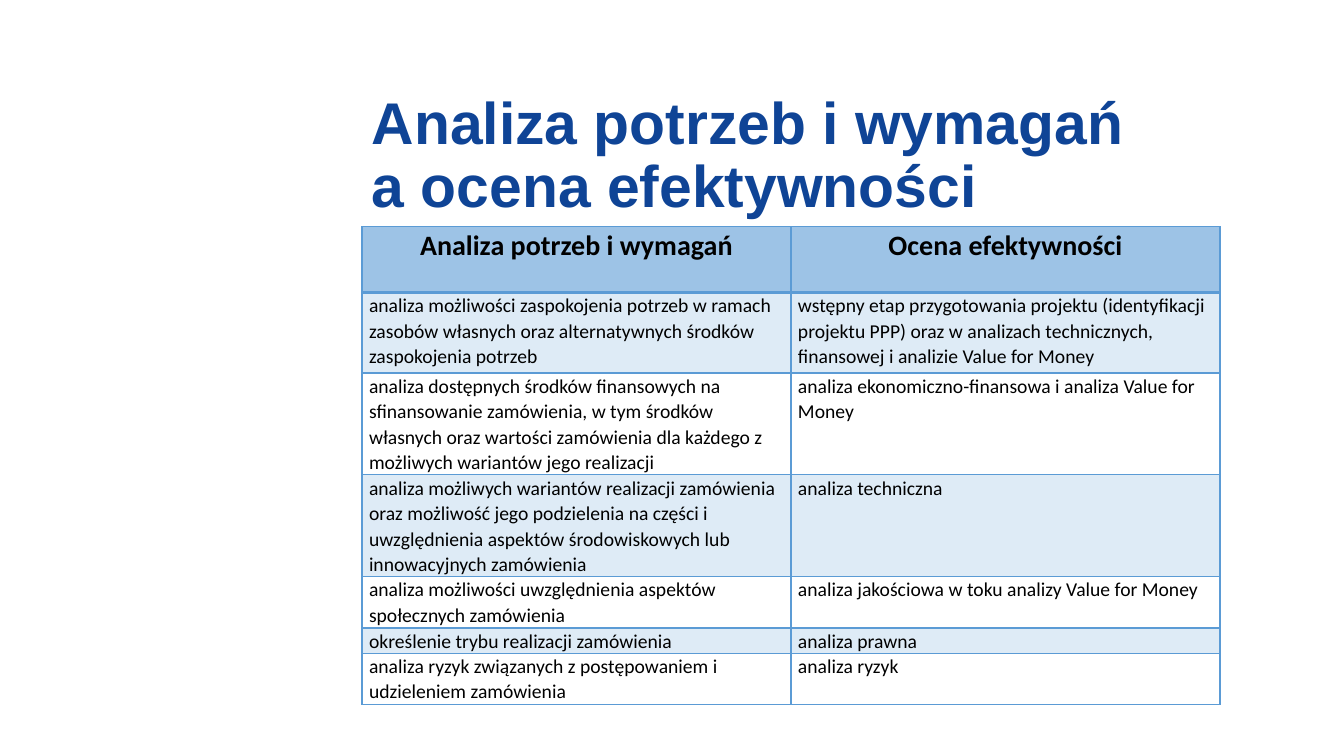
"""Build the slide comparing needs analysis with effectiveness assessment."""
from dataclasses import dataclass

from lxml.etree import SubElement
from pptx import Presentation
from pptx.dml.color import RGBColor
from pptx.enum.text import MSO_ANCHOR, PP_ALIGN
from pptx.oxml.ns import qn
from pptx.util import Inches, Pt


@dataclass(frozen=True)
class Theme:
    title_color: str = "0F4496"
    text_color: str = "000000"
    header_fill: str = "9DC3E6"
    accent: str = "5B9BD5"
    band_alpha: int = 20
    title_font: str = "Arial"
    table_font: str = "Calibri"
    title_size: int = 42
    header_size: int = 20
    body_size: int = 14


THEME = Theme()
TITLE_LINES = ["Analiza potrzeb i wymagań", "a ocena efektywności"]
HEADERS = ("Analiza potrzeb i wymagań", "Ocena efektywności")
COMPARISON = [
    ("analiza możliwości zaspokojenia potrzeb w ramach zasobów własnych oraz "
     "alternatywnych środków zaspokojenia potrzeb",
     "wstępny etap przygotowania projektu (identyfikacji projektu PPP) oraz "
     "w analizach technicznych, finansowej i analizie Value for Money"),
    ("analiza dostępnych środków finansowych na sfinansowanie zamówienia, "
     "w tym środków własnych oraz wartości zamówienia dla każdego "
     "z możliwych wariantów jego realizacji",
     "analiza ekonomiczno-finansowa i analiza Value for Money"),
    ("analiza możliwych wariantów realizacji zamówienia oraz możliwość jego "
     "podzielenia na części i uwzględnienia aspektów środowiskowych "
     "lub innowacyjnych zamówienia",
     "analiza techniczna"),
    ("analiza możliwości uwzględnienia aspektów społecznych zamówienia",
     "analiza jakościowa w toku analizy Value for Money"),
    ("określenie trybu realizacji zamówienia", "analiza prawna"),
    ("analiza ryzyk związanych z postępowaniem i udzieleniem zamówienia",
     "analiza ryzyk"),
]
ROW_HEIGHTS = [0.65, 0.8, 1.01, 1.01, 0.51, 0.25, 0.51]


def write_text(frame, lines, *, font, size, color, bold=False,
               align=PP_ALIGN.LEFT, spacing=1.0, after=0):
    """Write lines, split by line breaks, as one formatted paragraph."""
    frame.word_wrap = True
    paragraph = frame.paragraphs[0]
    paragraph.alignment = align
    paragraph.line_spacing = spacing
    paragraph.space_after = Pt(after)
    for index, line in enumerate(lines):
        if index:
            paragraph.add_line_break()
        run = paragraph.add_run()
        run.text = line
        run.font.name = font
        run.font.size = Pt(size)
        run.font.bold = bold
        run.font.color.rgb = RGBColor.from_string(color)


def add_title(slide):
    """Add the two-line title, centred vertically in its box."""
    box = slide.shapes.add_textbox(
        Inches(3.59), Inches(1.26), Inches(8.91), Inches(0.59))
    box.text_frame.vertical_anchor = MSO_ANCHOR.MIDDLE
    write_text(box.text_frame, TITLE_LINES, font=THEME.title_font,
               size=THEME.title_size, color=THEME.title_color, bold=True,
               spacing=0.9)


def set_borders(cell, **widths):
    """Draw the cell's borders, 1 pt wide unless a side is given a width."""
    properties = cell._tc.get_or_add_tcPr()
    for index, side in enumerate(("left", "right", "top", "bottom")):
        line = properties.makeelement(
            qn(f"a:ln{side[0].upper()}"), {"w": str(Pt(widths.get(side, 1)))})
        properties.insert(index, line)
        fill = SubElement(line, qn("a:solidFill"))
        SubElement(fill, qn("a:srgbClr"), val=THEME.accent)


def fill_cell(cell, row):
    """Fill the header, tint odd rows and leave even rows clear."""
    if row and row % 2 == 0:
        cell.fill.background()
        return
    cell.fill.solid()
    color = THEME.accent if row else THEME.header_fill
    cell.fill.fore_color.rgb = RGBColor.from_string(color)
    if row:
        color_element = cell._tc.tcPr.find(".//" + qn("a:srgbClr"))
        SubElement(color_element, qn("a:alpha"),
                   val=str(THEME.band_alpha * 1000))


def format_cell(cell, row, text):
    """Write one cell with its margins, fill and borders."""
    header = row == 0
    cell.margin_left = cell.margin_right = Inches(0.07)
    cell.margin_top = cell.margin_bottom = 0
    write_text(cell.text_frame, [text], font=THEME.table_font,
               size=THEME.header_size if header else THEME.body_size,
               color=THEME.text_color, bold=header,
               align=PP_ALIGN.CENTER if header else PP_ALIGN.LEFT,
               spacing=1.07, after=8)
    fill_cell(cell, row)
    set_borders(cell, top=2 if row == 1 else 1, bottom=2 if header else 1)


def add_comparison_table(slide):
    """Add the two-column table under the title."""
    rows = [HEADERS, *COMPARISON]
    table = slide.shapes.add_table(
        len(rows), len(HEADERS), Inches(3.59), Inches(2.25),
        Inches(8.51), Inches(sum(ROW_HEIGHTS))).table
    table.horz_banding = False
    for row, (texts, height) in enumerate(zip(rows, ROW_HEIGHTS)):
        table.rows[row].height = Inches(height)
        for column, text in enumerate(texts):
            format_cell(table.cell(row, column), row, text)


def main():
    """Build and save the presentation."""
    presentation = Presentation()
    presentation.slide_width = Inches(13.33)
    presentation.slide_height = Inches(7.5)
    slide = presentation.slides.add_slide(presentation.slide_layouts[6])
    add_title(slide)
    add_comparison_table(slide)
    presentation.save("out.pptx")


if __name__ == "__main__":
    main()
